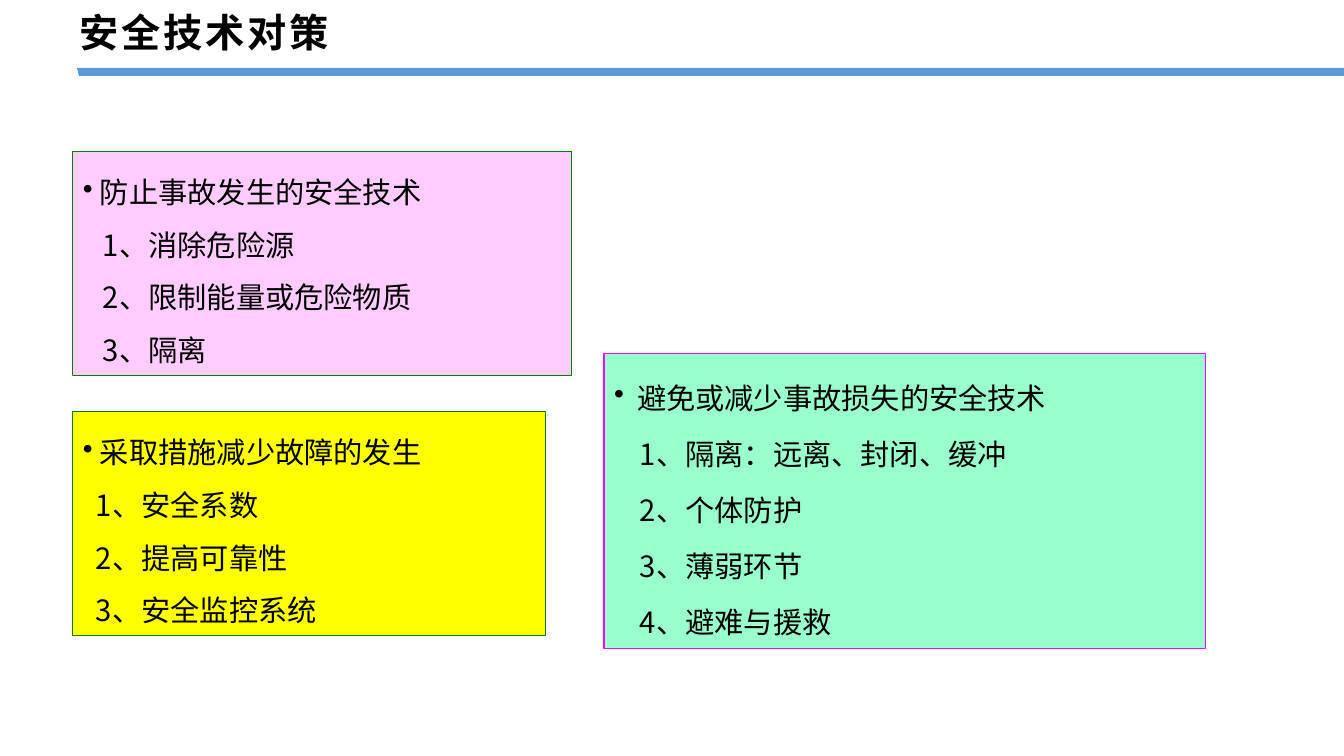
from dataclasses import dataclass

from pptx import Presentation
from pptx.dml.color import RGBColor
from pptx.enum.shapes import MSO_SHAPE as Shape
from pptx.enum.text import MSO_ANCHOR as Anchor, PP_ALIGN as Align
from pptx.oxml.ns import qn
from pptx.util import Emu, Pt

SCALE = 914400 / 100.8


@dataclass(frozen=True)
class Theme:
    ink: str = "000000"
    bar: str = "5B9BD5"
    pink: str = "FFCCFF"
    mint: str = "99FFCC"
    yellow: str = "FFFF00"
    green: str = "008000"
    magenta: str = "FF00FF"
    head: float = 28
    body: float = 20.9
    edge: float = 0.75
    latin: str = "Arial"
    cjk: str = "Noto Sans CJK SC"


THEME = Theme()


def px(n):
    return Emu(round(n * SCALE))


def rgb(code):
    return RGBColor.from_string(code)


def write(para, text, size, font, bold=False, track=0, left=0, hang=0, bullet=False, lines=1.0, align=Align.LEFT):
    props = para._p.get_or_add_pPr()
    props.set("marL", str(px(left)))
    props.set("indent", str(px(-hang)))
    para.alignment = align
    para.line_spacing = lines
    if bullet:
        props.append(props.makeelement(qn("a:buChar"), {"char": "•"}))
    else:
        props.append(props.makeelement(qn("a:buNone"), {}))
    run = para.add_run()
    run.text = text
    run.font.size = Pt(size)
    run.font.name = font
    run.font.bold = bold
    run.font.color.rgb = rgb(THEME.ink)
    style = run._r.get_or_add_rPr()
    style.set("lang", "zh-CN")
    style.set("spc", str(track * 100))
    east = style.makeelement(qn("a:ea"), {"typeface": THEME.cjk})
    style.find(qn("a:latin")).addnext(east)


def frame(shape, side, edge, anchor):
    body = shape.text_frame
    body.word_wrap = True
    body.vertical_anchor = anchor
    body.margin_left = body.margin_right = px(side)
    body.margin_top = body.margin_bottom = px(edge)
    return body


def header(slide, box, text):
    x, y, w, h = box
    top, deep, slant = y + 65, 8, 2
    form = slide.shapes.build_freeform(x + 4, top, scale=SCALE)
    form.add_line_segments([(x + w, top), (x + w, top + deep), (x + 4 + slant, top + deep)])
    bar = form.convert_to_shape()
    bar.shadow.inherit = False
    bar.fill.solid()
    bar.fill.fore_color.rgb = rgb(THEME.bar)
    bar.line.fill.background()
    title = slide.shapes.add_textbox(px(x), px(y), px(723), px(h))
    body = frame(title, 7, 3, Anchor.MIDDLE)
    write(body.paragraphs[0], text, THEME.head, THEME.latin, bold=True, track=2)


def panel(slide, box, fill, line, lead, items, hang, inset, lines):
    card = slide.shapes.add_shape(Shape.RECTANGLE, *map(px, box))
    card.shadow.inherit = False
    card.fill.solid()
    card.fill.fore_color.rgb = rgb(fill)
    card.line.color.rgb = rgb(line)
    card.line.width = Pt(THEME.edge)
    body = frame(card, 10, 5, Anchor.TOP)
    look = dict(size=THEME.body, font=THEME.cjk, lines=lines, align=Align.JUSTIFY)
    write(body.paragraphs[0], lead, left=hang, hang=hang, bullet=True, **look)
    for num, item in enumerate(items, 1):
        write(body.add_paragraph(), f"{num}、{item}", left=inset, **look)


def main():
    deck = Presentation()
    deck.slide_width, deck.slide_height = px(1344), px(756)
    slide = deck.slides.add_slide(deck.slide_layouts[6])
    header(slide, (73, 3, 1271, 57), "安全技术对策")
    panel(slide, (73, 152, 499, 224), THEME.pink, THEME.green,
          "防止事故发生的安全技术",
          ["消除危险源", "限制能量或危险物质", "隔离"],
          hang=17, inset=20, lines=1.5)
    panel(slide, (604, 354, 602, 295), THEME.mint, THEME.magenta,
          "避免或减少事故损失的安全技术",
          ["隔离：远离、封闭、缓冲", "个体防护", "薄弱环节", "避难与援救"],
          hang=23, inset=26, lines=1.6)
    panel(slide, (73, 412, 473, 224), THEME.yellow, THEME.green,
          "采取措施减少故障的发生",
          ["安全系数", "提高可靠性", "安全监控系统"],
          hang=17, inset=13, lines=1.5)
    deck.save("out.pptx")


if __name__ == "__main__":
    main()
